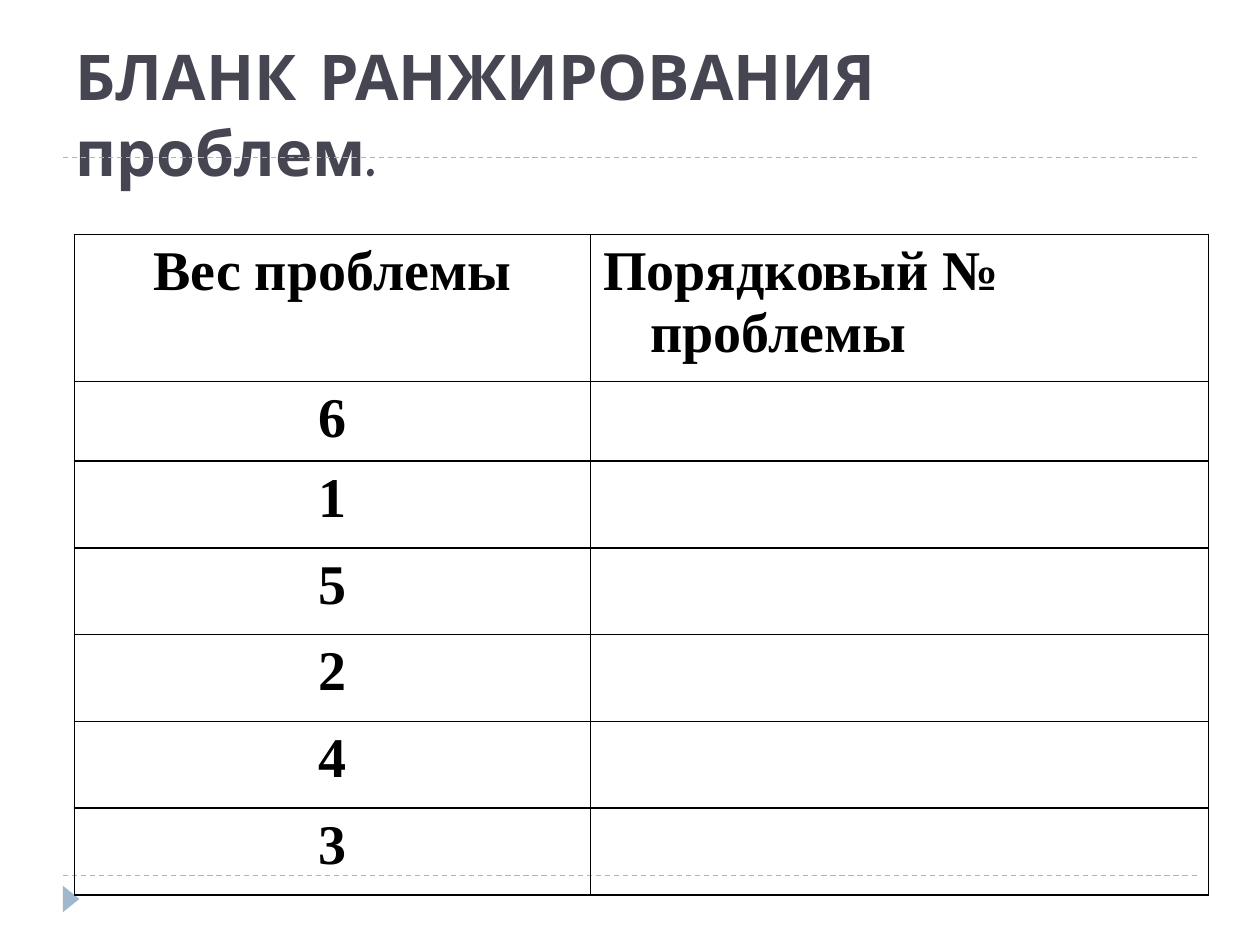
"""Build the problem ranking form slide."""
from typing import NamedTuple

from lxml.etree import SubElement
from pptx import Presentation
from pptx.dml.color import RGBColor
from pptx.enum.dml import MSO_LINE
from pptx.enum.shapes import MSO_CONNECTOR, MSO_SHAPE
from pptx.enum.text import MSO_ANCHOR, MSO_AUTO_SIZE, PP_ALIGN
from pptx.oxml.ns import qn
from pptx.util import Pt

WHITE = RGBColor(0xFF, 0xFF, 0xFF)
BLACK = RGBColor(0x00, 0x00, 0x00)
SLATE = RGBColor(0x46, 0x46, 0x53)
PALE_BLUE = RGBColor(0x9F, 0xB8, 0xCD)
TITLE_FONT = "Comic Neue"
TABLE_FONT = "Times New Roman"


class TableRow(NamedTuple):
    weight: str
    number: str
    height: float


ROWS = [
    TableRow("Вес проблемы", "Порядковый № проблемы", 84),
    TableRow("6", "", 45.5),
    *(TableRow(weight, "", 49.6) for weight in "15243"),
]
COLUMN_WIDTHS = (295, 353)
RULE_TOPS = (500.4, 90)


def write_text(paragraph, text: str, *, font: str, size: float, color: RGBColor,
               align=PP_ALIGN.LEFT, hanging: float = 0) -> None:
    paragraph.alignment = align
    run = paragraph.add_run()
    run.text = text
    run.font.name = font
    run.font.size = Pt(size)
    run.font.bold = True
    run.font.color.rgb = color
    if hanging:
        properties = paragraph._p.get_or_add_pPr()
        properties.set("marL", str(Pt(hanging)))
        properties.set("indent", str(-Pt(hanging)))


def add_rule(slide, top: float) -> None:
    rule = slide.shapes.add_connector(
        MSO_CONNECTOR.STRAIGHT, Pt(36), Pt(top), Pt(684), Pt(top))
    rule.line.color.rgb = PALE_BLUE
    rule.line.width = Pt(0.75)
    rule.line.dash_style = MSO_LINE.DASH
    SubElement(rule._element.spPr, qn("a:effectLst"))


def add_marker(slide) -> None:
    marker = slide.shapes.add_shape(
        MSO_SHAPE.ISOSCELES_TRIANGLE, Pt(33.1), Pt(509), Pt(15.1), Pt(9.4))
    marker.rotation = 90
    marker.shadow.inherit = False
    marker.fill.solid()
    marker.fill.fore_color.rgb = PALE_BLUE
    marker.line.fill.background()


def add_title(slide, text: str) -> None:
    title = slide.shapes.title
    title.left, title.top, title.width, title.height = Pt(36), Pt(21.6), Pt(648), Pt(90)
    frame = title.text_frame
    frame.word_wrap = True
    frame.auto_size = MSO_AUTO_SIZE.NONE
    frame.vertical_anchor = MSO_ANCHOR.BOTTOM
    write_text(frame.paragraphs[0], text, font=TITLE_FONT, size=36, color=SLATE)


def set_borders(cell) -> None:
    properties = cell._tc.get_or_add_tcPr()
    for position, side in enumerate(("a:lnL", "a:lnR", "a:lnT", "a:lnB")):
        line = properties.makeelement(qn(side), {"w": str(Pt(1))})
        fill = SubElement(line, qn("a:solidFill"))
        SubElement(fill, qn("a:srgbClr"), val=str(BLACK))
        properties.insert(position, line)


def add_ranking_table(slide, rows: list[TableRow]) -> None:
    table = slide.shapes.add_table(
        len(rows), len(COLUMN_WIDTHS), Pt(42.5), Pt(134), Pt(sum(COLUMN_WIDTHS)),
        Pt(sum(row.height for row in rows))).table
    table.first_row = False
    table.horz_banding = False
    for column, width in zip(table.columns, COLUMN_WIDTHS):
        column.width = Pt(width)
    for table_row, row in zip(table.rows, rows):
        table_row.height = Pt(row.height)
        texts = ((row.weight, PP_ALIGN.CENTER), (row.number, PP_ALIGN.LEFT))
        for cell, (text, align) in zip(table_row.cells, texts):
            cell.fill.background()
            set_borders(cell)
            if text:
                write_text(cell.text_frame.paragraphs[0], text, font=TABLE_FONT,
                           size=32, color=BLACK, align=align, hanging=27)


def main() -> None:
    presentation = Presentation()
    presentation.slide_width, presentation.slide_height = Pt(720), Pt(540)
    slide = presentation.slides.add_slide(presentation.slide_layouts[5])
    slide.background.fill.solid()
    slide.background.fill.fore_color.rgb = WHITE
    for top in RULE_TOPS:
        add_rule(slide, top)
    add_marker(slide)
    add_title(slide, "БЛАНК РАНЖИРОВАНИЯ проблем.")
    add_ranking_table(slide, ROWS)
    presentation.save("out.pptx")


if __name__ == "__main__":
    main()
